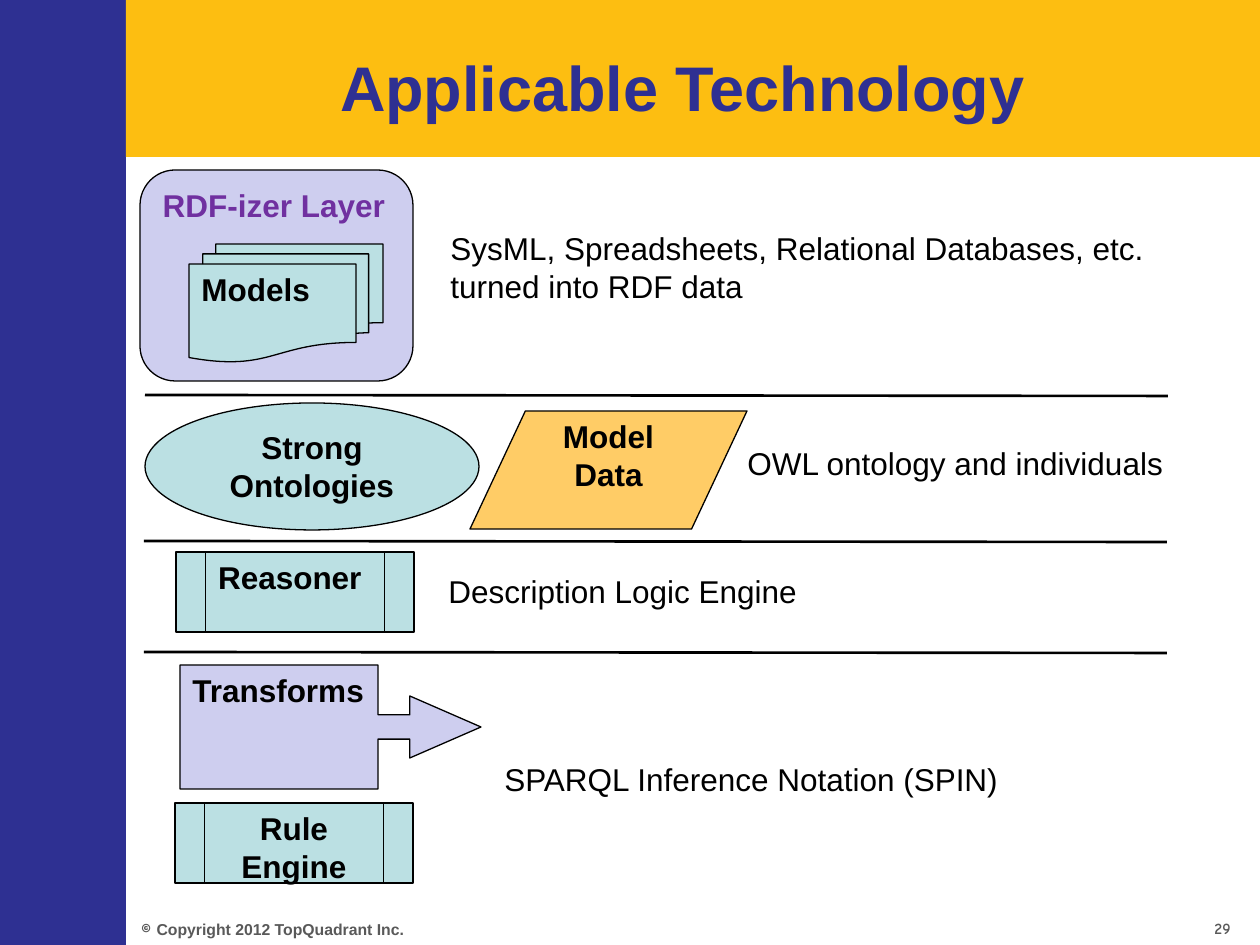
from lxml.etree import SubElement
from pptx import Presentation
from pptx.dml.color import RGBColor
from pptx.enum.shapes import MSO_CONNECTOR, MSO_SHAPE as Shape
from pptx.enum.text import MSO_ANCHOR as Anchor, MSO_AUTO_SIZE, PP_ALIGN as Align
from pptx.oxml.ns import qn
from pptx.util import Emu, Pt

PX = 914400 / 126
COLORS = {
    "navy": "2E3092", "gold": "FDBE11", "lavender": "CECEEF", "teal": "BBE0E3",
    "orange": "FFCC66", "purple": "7030A0", "black": "000000", "gray": "595959",
}


def px(*values):
    """Turn pixel lengths into EMU."""
    return [Emu(round(v * PX)) for v in values]


def rgb(name):
    """Look up a named colour."""
    return RGBColor.from_string(COLORS[name])


def style(p, size, color="black", bold=False, align=Align.LEFT, font="Arial"):
    """Format a whole paragraph."""
    p.alignment = align
    p.font.name = font
    p.font.size = Pt(size)
    p.font.bold = bold
    p.font.color.rgb = rgb(color)


def add_band(s, box, color):
    """Add a plain background band."""
    band = s.shapes.add_shape(Shape.RECTANGLE, *px(*box))
    band.shadow.inherit = False
    band.fill.solid()
    band.fill.fore_color.rgb = rgb(color)
    band.line.fill.background()


def add_title(s, text):
    """Place and format the title placeholder."""
    title = s.shapes.title
    title.left, title.top, title.width, title.height = px(126, 42, 1113, 88)
    tf = title.text_frame
    tf.text = text
    tf.auto_size = MSO_AUTO_SIZE.NONE
    tf.vertical_anchor = Anchor.MIDDLE
    style(tf.paragraphs[0], 36, "navy", True, Align.CENTER)


def add_text(s, box, text, size=18, **look):
    """Add a wrapped text box and return its text frame."""
    tf = s.shapes.add_textbox(*px(*box)).text_frame
    tf.word_wrap = True
    p = tf.paragraphs[0]
    p.add_run().text = text
    style(p, size, **look)
    return tf


def add_block(s, kind, box, text, fill, align=Align.LEFT, color="black", adjust=()):
    """Add an outlined diagram shape with a bold label at its top."""
    block = s.shapes.add_shape(kind, *px(*box))
    block.shadow.inherit = False
    block.fill.solid()
    block.fill.fore_color.rgb = rgb(fill)
    block.line.color.rgb = rgb("black")
    block.line.width = Pt(0.75)
    for i, value in enumerate(adjust):
        block.adjustments[i] = value
    tf = block.text_frame
    tf.word_wrap = True
    tf.vertical_anchor = Anchor.TOP
    tf.text = text
    style(tf.paragraphs[0], 18, color, True, align)


def add_divider(s, left, top):
    """Add a slightly sloping rule between two rows."""
    line = s.shapes.add_connector(
        MSO_CONNECTOR.STRAIGHT, *px(left, top, left + 1023, top + 1))
    line.line.color.rgb = rgb("black")
    line.line.width = Pt(1.5)
    SubElement(line._element.spPr, qn("a:effectLst"))


def add_footer(s):
    """Add the copyright line and the page number."""
    look = {"color": "gray", "bold": True, "font": "Comic Neue"}
    tf = add_text(s, (129, 913, 953, 32), "© ", 9, **look)
    tf.vertical_anchor = Anchor.MIDDLE
    r = tf.paragraphs[0].add_run()
    r.text = "Copyright 2012 TopQuadrant Inc."
    r.font.name = "Arial"
    add_text(s, (1202, 913, 58, 32), "29", 9, **look)


def main():
    """Build the slide."""
    prs = Presentation()
    prs.slide_width, prs.slide_height = px(1260, 945)
    s = prs.slides.add_slide(prs.slide_layouts[5])

    add_band(s, (0, 0, 126, 945), "navy")
    add_band(s, (126, 0, 1134, 157), "gold")
    title = s.shapes.title._element
    s.shapes._spTree.append(title)
    add_title(s, "Applicable Technology")
    add_footer(s)

    for box, text in [
        ((438, 223, 769, 90),
         "SysML, Spreadsheets, Relational Databases, etc. turned into RDF data"),
        ((735, 438, 489, 50), "OWL ontology and individuals"),
        ((436, 566, 583, 50), "Description Logic Engine"),
        ((492, 754, 628, 50), "SPARQL Inference Notation (SPIN)"),
    ]:
        add_text(s, box, text)

    process = Shape.FLOWCHART_PREDEFINED_PROCESS
    add_block(s, Shape.ROUNDED_RECTANGLE, (140, 170, 273, 211),
              "RDF-izer Layer", "lavender", color="purple")
    add_block(s, Shape.FLOWCHART_MULTIDOCUMENT, (189, 244, 194, 118), "Models", "teal")
    add_block(s, Shape.OVAL, (145, 403, 334, 127),
              "Strong Ontologies", "teal", Align.CENTER)
    add_block(s, Shape.FLOWCHART_DATA, (470, 411, 277, 118),
              "Model Data", "orange", Align.CENTER)
    add_block(s, process, (176, 552, 238, 80), "Reasoner", "teal")
    add_block(s, Shape.RIGHT_ARROW_CALLOUT, (180, 665, 301, 124),
              "Transforms", "lavender", adjust=(0.196, 0.25, 0.574, 0.658))
    add_block(s, process, (175, 803, 238, 80), "Rule Engine", "teal", Align.CENTER)

    for left, top in [(145, 395), (144, 541), (144, 652)]:
        add_divider(s, left, top)

    prs.save("out.pptx")


if __name__ == "__main__":
    main()
